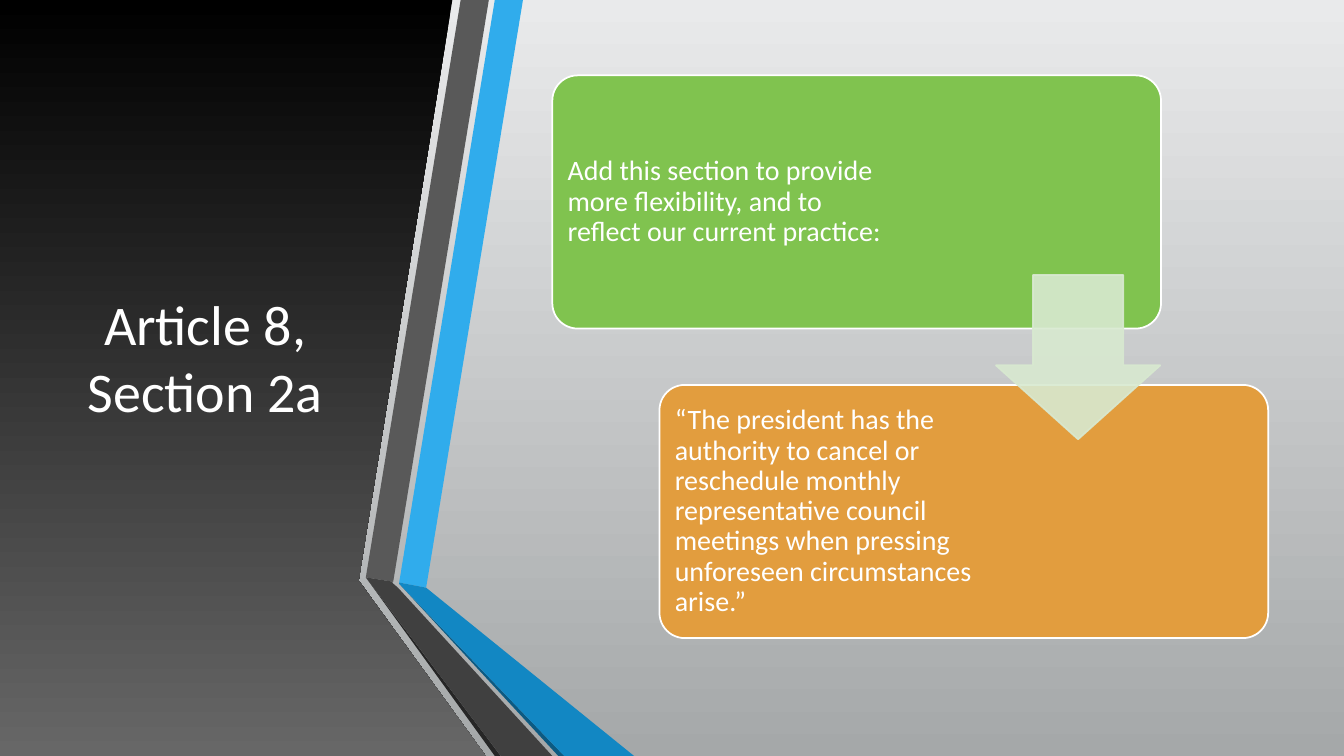
from lxml import etree
from pptx import Presentation
from pptx import util as u
from pptx.dml.color import RGBColor
from pptx.enum import shapes, text
from pptx.oxml.ns import qn

# Content
HEADING = "Article 8, Section 2a"
CARDS = [  # wording, fill, right inset in cm
    ("Add this section to provide more flexibility, and to reflect our current practice:",
     "80C34F", 6.44),
    ("“The president has the authority to cancel or reschedule monthly representative "
     "council meetings when pressing unforeseen circumstances arise.”",
     "E29D3E", 7.05),
]

# Geometry in cm
WIDTH, HEIGHT = 33.87, 19.05
TITLE_BOX = (1.5, 1.9, 7.34, 14.17)
CARD_START, CARD_STEP, CARD_SIZE = (13.92, 1.9), (2.7, 7.8), (15.34, 6.38)
ARROW_BOX = (25.1, 6.93, 4.14, 4.14)
PANEL = [(0, 0), (11.4, 0), (9.04, 14.63), (12.24, HEIGHT), (0, HEIGHT)]
RIBBONS = [
    ("30ACEC", [(10.06, 14.68), (10.74, 14.81), (13.18, 0), (12.47, 0)]),
    ("595959", [(12.32, 0), (11.61, 0), (9.22, 14.55), (9.91, 14.66)]),
    ("262626", [(9.22, 14.55), (12.47, HEIGHT), (12.62, HEIGHT)]),
    ("0C5A82", [(10.06, 14.71), (14.07, HEIGHT), (14.22, HEIGHT)]),
    ("1287C3", [(10.06, 14.71), (14.22, HEIGHT), (15.98, HEIGHT),
                (10.74, 14.81), (10.06, 14.68)]),
    ("404040", [(13.92, HEIGHT), (10.03, 14.81), (9.88, 14.68), (9.91, 14.66),
                (9.22, 14.55), (12.62, HEIGHT)]),
]


def rgb(value):
    return RGBColor.from_string(value)


def cm(values):
    return [u.Cm(value) for value in values]


def apply(target, formats):
    for name, value in formats.items():
        setattr(target, name, value)


def paint_solid(part, colour, outline=None):
    part.shadow.inherit = False
    part.fill.solid()
    part.fill.fore_color.rgb = rgb(colour)
    if outline:
        part.line.color.rgb = rgb(outline)
        part.line.width = u.Pt(1.25)
    else:
        part.line.fill.background()


def paint_downward(fill, top, bottom):
    fill.gradient()
    fill.gradient_angle = 270
    for stop, colour in zip(fill.gradient_stops, (top, bottom)):
        stop.color.rgb = rgb(colour)


def outline_shape(slide, points, colour):
    start, *rest = [cm(point) for point in points]
    builder = slide.shapes.build_freeform(*start)
    builder.add_line_segments(rest)
    part = builder.convert_to_shape()
    paint_solid(part, colour)
    return part


def write(part, wording, size, frame_format, paragraph_format):
    frame = part.text_frame
    frame.text = wording
    apply(frame, {"word_wrap": True, "auto_size": text.MSO_AUTO_SIZE.NONE,
                  "vertical_anchor": text.MSO_ANCHOR.MIDDLE, **frame_format})
    paragraph = frame.paragraphs[0]
    apply(paragraph, paragraph_format)
    font = paragraph.runs[0].font
    apply(font, {"name": "Calibri", "size": u.Pt(size)})
    font.color.rgb = rgb("FFFFFF")


def main():
    deck = Presentation()
    deck.slide_width, deck.slide_height = cm((WIDTH, HEIGHT))
    slide = deck.slides.add_slide(deck.slide_layouts[5])
    paint_downward(slide.background.fill, "E9EAEB", "A5A8A9")

    # Dark side panel with the title on top of it
    panel = outline_shape(slide, PANEL, "000000")
    paint_downward(panel.fill, "000000", "676767")
    title = slide.shapes.title
    apply(title, dict(zip(("left", "top", "width", "height"), cm(TITLE_BOX))))
    write(title, HEADING, 40, {}, {"alignment": text.PP_ALIGN.CENTER})
    panel._element.addnext(title._element)

    # Folded ribbons along the panel edge
    for colour, points in RIBBONS:
        outline_shape(slide, points, colour)

    # Staggered cards
    for index, (wording, colour, right_inset) in enumerate(CARDS):
        corner = [start + index * step for start, step in zip(CARD_START, CARD_STEP)]
        card = slide.shapes.add_shape(shapes.MSO_SHAPE.ROUNDED_RECTANGLE,
                                      *cm(corner), *cm(CARD_SIZE))
        card.adjustments[0] = 0.1
        paint_solid(card, colour, "FFFFFF")
        write(card, wording, 20,
              {"margin_left": u.Cm(0.2), "margin_right": u.Cm(right_inset),
               "margin_top": u.Cm(0.2), "margin_bottom": u.Cm(0.2)},
              {"alignment": text.PP_ALIGN.LEFT, "line_spacing": 0.9})

    # Translucent arrow from the first card to the second
    arrow = slide.shapes.add_shape(shapes.MSO_SHAPE.DOWN_ARROW, *cm(ARROW_BOX))
    arrow.adjustments[0], arrow.adjustments[1] = 0.55, 0.45
    paint_solid(arrow, "D8E9D0", "D8E9D0")
    for colour in arrow._element.spPr.iter(qn("a:srgbClr")):
        etree.SubElement(colour, qn("a:alpha"), val="90000")

    deck.save("out.pptx")


if __name__ == "__main__":
    main()
